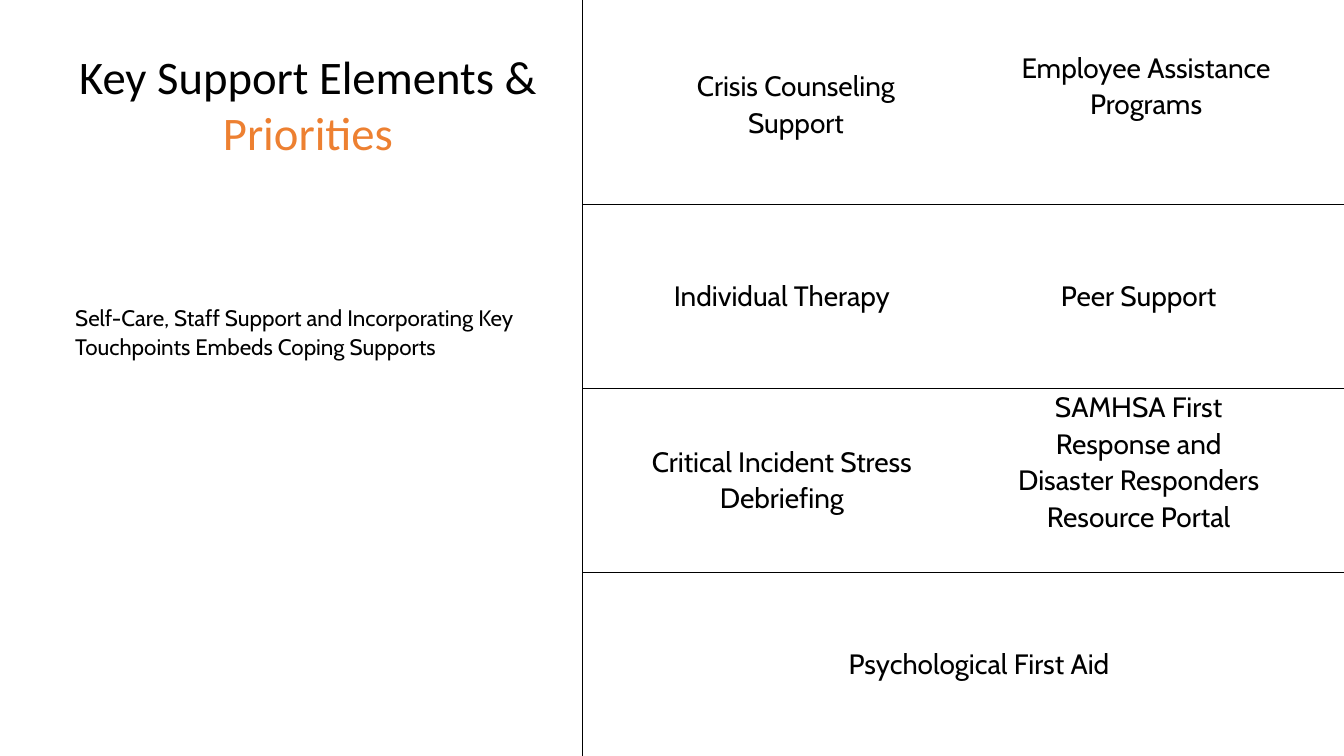
from typing import NamedTuple

from lxml import etree
from pptx import Presentation
from pptx.dml.color import RGBColor
from pptx.enum.shapes import MSO_CONNECTOR
from pptx.enum.text import MSO_AUTO_SIZE, PP_ALIGN
from pptx.oxml.ns import qn
from pptx.util import Pt

STRAIGHT = MSO_CONNECTOR.STRAIGHT
CENTER, LEFT = PP_ALIGN.CENTER, PP_ALIGN.LEFT
NO_AUTOFIT = MSO_AUTO_SIZE.NONE

COLORS = {"ink": "000000", "accent": "ED8031"}
SLIDE_W, SLIDE_H = 1440, 810
DIVIDER_X = 624
FIRST_RULE_Y, ROW_STEP = 219, 197
COL_1, COL_2 = 690.5, 1080.7


class Style(NamedTuple):
    font: str
    size: float
    leading: float
    align: PP_ALIGN


class Line(NamedTuple):
    text: str
    color: str = "ink"


class Block(NamedTuple):
    left: float
    top: float
    width: float
    height: float
    lines: list[Line]
    style: Style


TITLE = Style("Calibri", 50, 60, CENTER)
SUMMARY = Style("Cabin", 24, 31.2, LEFT)
ELEMENT = Style("Cabin", 30, 39, CENTER)

BLOCKS = [
    Block(80.6, 51.1, 499, 181.4,
          [Line("Key Support Elements &"), Line("Priorities", "accent")], TITLE),
    Block(80.6, 323.3, 499, 61.2,
          [Line("Self-Care, Staff Support and Incorporating Key "
                "Touchpoints Embeds Coping Supports")], SUMMARY),
    Block(705.6, 70.6, 294.5, 78.5, [Line("Crisis Counseling Support")], ELEMENT),
    Block(COL_2, 51.1, 294.5, 118.1, [Line("Employee Assistance Programs")], ELEMENT),
    Block(COL_1, 295.9, 294.5, 39.6, [Line("Individual Therapy")], ELEMENT),
    Block(COL_2, 295.9, 278.6, 39.6, [Line("Peer Support")], ELEMENT),
    Block(COL_1, 473, 294.5, 78.5,
          [Line("Critical Incident Stress Debriefing")], ELEMENT),
    Block(COL_2, 414.7, 278.6, 195.8,
          [Line("SAMHSA First Response and Disaster Responders Resource Portal")],
          ELEMENT),
    Block(775.4, 689.8, 547.2, 39.6, [Line("Psychological First Aid")], ELEMENT),
]


def add_rule(s, x1: float, y1: float, x2: float, y2: float) -> None:
    rule = s.shapes.add_connector(STRAIGHT, Pt(x1), Pt(y1), Pt(x2), Pt(y2))
    rule.line.color.rgb = RGBColor.from_string(COLORS["ink"])
    rule.line.width = Pt(0.75)
    etree.SubElement(rule._element.spPr, qn("a:effectLst"))


def add_block(s, block: Block) -> None:
    sp = s.shapes.add_textbox(*map(Pt, block[:4]))
    tf = sp.text_frame
    frame_format = {"word_wrap": True, "auto_size": NO_AUTOFIT, "margin_left": 0,
                    "margin_top": 0, "margin_right": 0, "margin_bottom": 0}
    for name, value in frame_format.items():
        setattr(tf, name, value)
    style = block.style
    for i, line in enumerate(block.lines):
        p = tf.add_paragraph() if i else tf.paragraphs[0]
        p.alignment = style.align
        p.line_spacing = Pt(style.leading)
        r = p.add_run()
        r.text = line.text
        for name, value in {"name": style.font, "size": Pt(style.size)}.items():
            setattr(r.font, name, value)
        r.font.color.rgb = RGBColor.from_string(COLORS[line.color])


def main() -> None:
    prs = Presentation()
    prs.slide_width, prs.slide_height = Pt(SLIDE_W), Pt(SLIDE_H)
    s = prs.slides.add_slide(prs.slide_layouts[6])
    add_rule(s, DIVIDER_X, 0, DIVIDER_X, SLIDE_H)
    for row in range(3):
        y = FIRST_RULE_Y + row * ROW_STEP
        add_rule(s, DIVIDER_X, y, SLIDE_W, y)
    for block in BLOCKS:
        add_block(s, block)
    prs.save("out.pptx")


if __name__ == "__main__":
    main()
